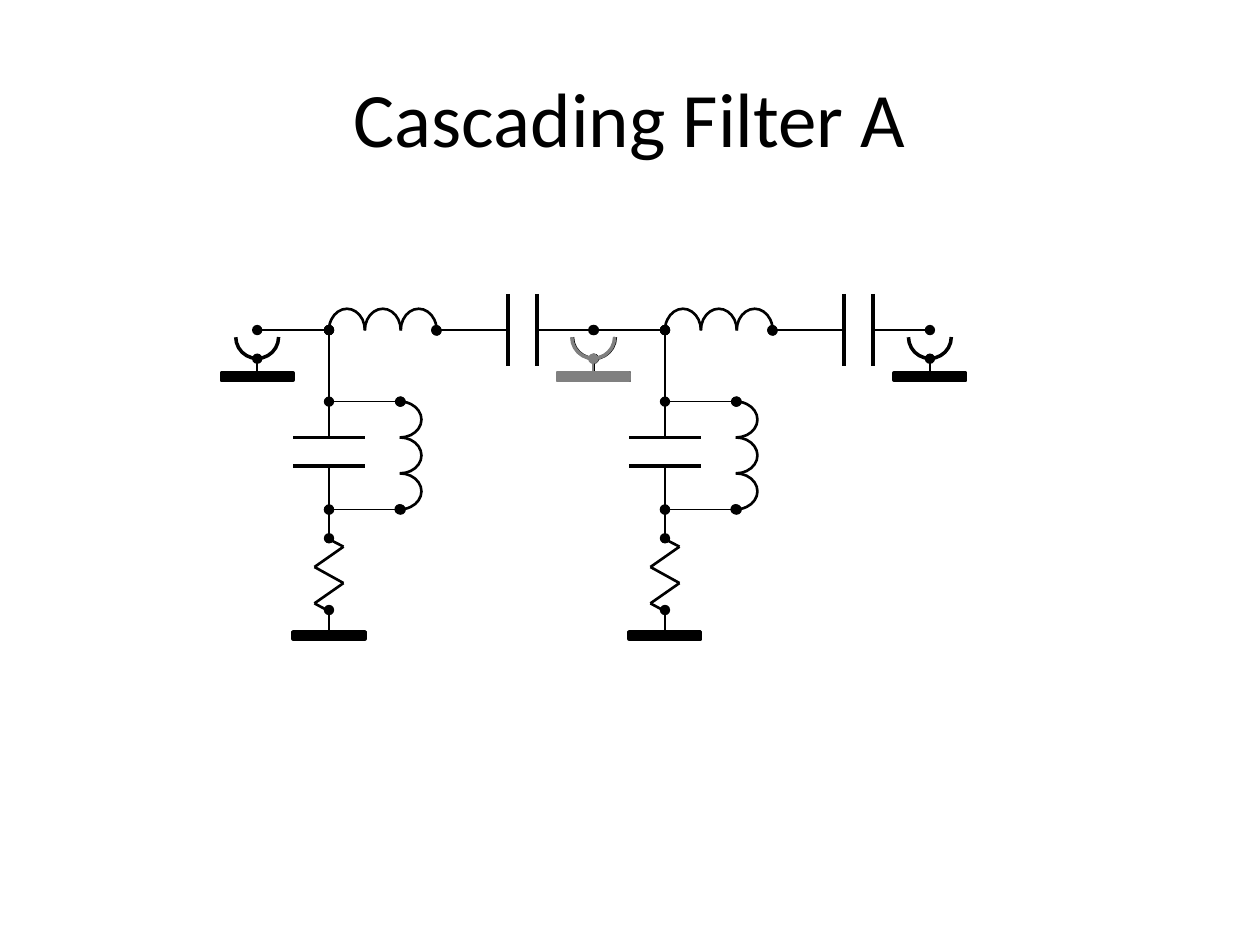
from pptx import Presentation
from pptx.dml.color import RGBColor
from pptx.enum.shapes import MSO_CONNECTOR, MSO_SHAPE
from pptx.enum.text import MSO_ANCHOR, PP_ALIGN
from pptx.oxml.ns import qn
from pptx.util import Pt
from lxml.etree import SubElement

BLACK = RGBColor(0, 0, 0)
GREY = RGBColor(128, 128, 128)
STAGE_X = (188, 380)
PORT_COLORS = ((BLACK, BLACK), (GREY, BLACK))
RAIL_Y = 188.6
COIL_STEP = 20.5

WIRES = [
    (-41, RAIL_Y, 0, RAIL_Y, 1, "both"),
    (61.3, RAIL_Y, 102.4, RAIL_Y, 1, "head"),
    (0, 229.5, 41, 229.5, 1, "both"),
    (0, 291.2, 41, 291.2, 1, "both"),
    (119, RAIL_Y, 151.4, RAIL_Y, 1, "tail"),
    (0, 229.5, 0, 250, 1, ""),
    (0, 266.4, 0, 291.2, 1, ""),
    (0, 229.5, 0, RAIL_Y, 1, "tail"),
    (0, 307.6, 0, 291.2, 1, "both"),
    (0, 348.6, 0, 361, 1, "head"),
]
CAPACITOR_PLATES = [
    (102.4, 168, 102.4, 209, 2, ""),
    (119, 168, 119, 209, 2, ""),
    (20.5, 250, -20.5, 250, 2, ""),
    (20.5, 266.4, -20.5, 266.4, 2, ""),
]
RESISTOR = [(-1, 307.6), (8.3, 312.4), (-8.3, 324), (8.3, 333.2), (-8.3, 344.8), (1, 349.8)]
ZIGZAG = [(*start, *end, 1.5, "") for start, end in zip(RESISTOR, RESISTOR[1:])]


def style_line(shape, color, width, dots):
    shape.line.color.rgb = color
    shape.line.width = Pt(width)
    outline = shape.line._get_or_add_ln()
    for end in ("head", "tail"):
        if dots in (end, "both"):
            SubElement(outline, qn(f"a:{end}End"), type="oval")
    if shape._element.spPr.find(qn("a:effectLst")) is None:
        SubElement(shape._element.spPr, qn("a:effectLst"))


def add_part(group, kind, bounds, color, width, dots="", rotation=0, sweep_end=None):
    shape = group.shapes.add_shape(kind, *map(Pt, bounds))
    shape.rotation = rotation
    if sweep_end is None:
        shape.fill.solid()
        shape.fill.fore_color.rgb = color
    else:
        shape.fill.background()
        shape.adjustments[0] = 162
        shape.adjustments[1] = sweep_end
    style_line(shape, color, width, dots)


deck = Presentation()
deck.slide_width, deck.slide_height = Pt(720), Pt(540)
page = deck.slides.add_slide(deck.slide_layouts[5])

title = page.shapes.title
title.left, title.top, title.width, title.height = Pt(36), Pt(21.6), Pt(648), Pt(90)
title.text_frame.text = "Cascading Filter A"
title.text_frame.vertical_anchor = MSO_ANCHOR.MIDDLE
paragraph = title.text_frame.paragraphs[0]
paragraph.alignment = PP_ALIGN.CENTER
font = paragraph.runs[0].font
font.name, font.size, font.color.rgb = "Calibri", Pt(44), BLACK

for junction, port_colors in zip(STAGE_X, PORT_COLORS):
    stage = page.shapes.add_group_shape()

    for turn, dots in enumerate(("head", "", "tail")):
        shift = turn * COIL_STEP
        add_part(stage, MSO_SHAPE.ARC, (junction + 28.4, 229.5 + shift, 24.5, COIL_STEP),
                 BLACK, 1.5, dots, 0, 54.86)
        add_part(stage, MSO_SHAPE.ARC, (junction - 2 + shift, 178.4, 24.5, COIL_STEP),
                 BLACK, 1.5, dots, 270, 54.86)

    lines = [(*line, BLACK) for line in WIRES + CAPACITOR_PLATES + ZIGZAG]
    grounds = [(0, 361, BLACK)]
    for port, color in zip((-41, 151.4), port_colors):
        lines.append((port, 205, port, 213.2, 1, "head", color))
        grounds.append((port, 213.2, color))
        add_part(stage, MSO_SHAPE.ARC, (junction + port - 12.3, 180.4, 24.5, 24.5),
                 color, 2, "", 90, 53.69)

    for x, y, color in grounds:
        add_part(stage, MSO_SHAPE.RECTANGLE, (junction + x - 20.5, y, 41, 4.1), color, 2)

    for x1, y1, x2, y2, width, dots, color in lines:
        wire = stage.shapes.add_connector(
            MSO_CONNECTOR.STRAIGHT, Pt(junction + x1), Pt(y1), Pt(junction + x2), Pt(y2))
        style_line(wire, color, width, dots)

deck.save("out.pptx")
